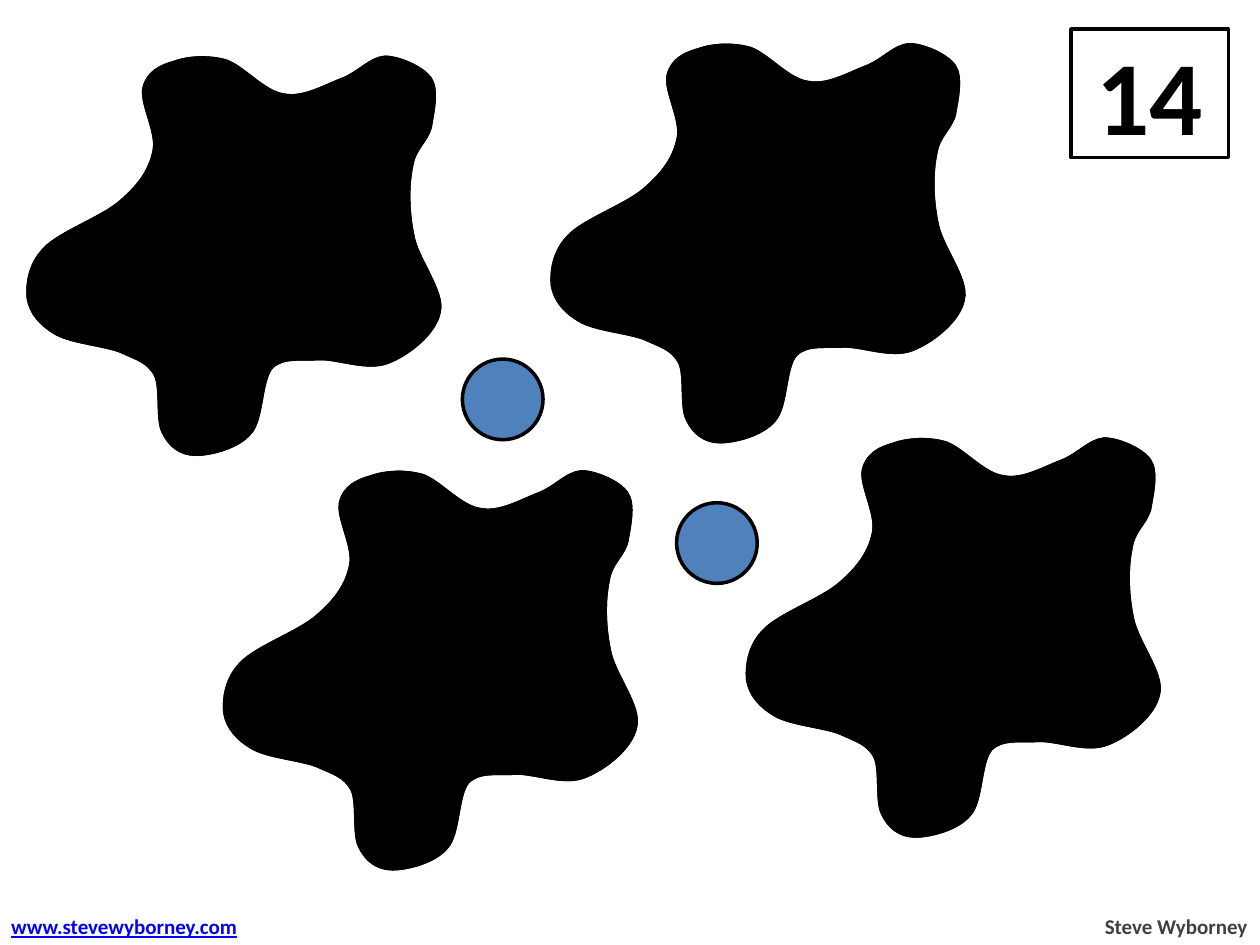
from lxml.etree import SubElement
from pptx import Presentation
from pptx.dml.color import RGBColor
from pptx.enum.shapes import MSO_SHAPE
from pptx.enum.text import MSO_ANCHOR, MSO_AUTO_SIZE, PP_ALIGN
from pptx.oxml.ns import qn
from pptx.util import Inches, Pt

BLACK, WHITE, BLUE = "000000", "FFFFFF", "4F81BD"
DOT_SIZE = 0.64
DOTS = [(2.14, 5.15), (4.47, 1.82), (4.1, 4.18), (0.58, 1.97), (5.37, 3.99),
        (1.33, 2.89), (2.43, 1.93), (6.83, 2.06), (2.98, 3.95), (3.67, 2.85),
        (8.3, 3.93), (6.51, 4.97), (6.94, 3.67), (5.47, 2.66)]
SPLATS = [(0.28, 0.4), (4.44, 0.3), (5.99, 3.43), (1.84, 3.69)]

# Splat outline before rotation, in hundredths of an inch:
# a start point, then two control points and an end point per curve
SPLAT_START = (96, 22)
SPLAT_CURVES = [
    ((103, 10), (112, 2), (124, 0)),
    ((135, -1), (151, 1), (163, 13)),
    ((176, 25), (188, 60), (201, 74)),
    ((214, 89), (226, 97), (241, 100)),
    ((256, 103), (279, 89), (291, 92)),
    ((303, 95), (308, 105), (311, 116)),
    ((315, 127), (316, 143), (312, 157)),
    ((307, 171), (287, 187), (285, 203)),
    ((282, 218), (292, 235), (297, 248)),
    ((302, 262), (314, 271), (315, 283)),
    ((315, 294), (307, 313), (298, 319)),
    ((289, 325), (272, 321), (260, 319)),
    ((248, 316), (243, 306), (228, 304)),
    ((214, 301), (193, 301), (174, 305)),
    ((155, 308), (129, 330), (113, 326)),
    ((96, 323), (79, 301), (73, 285)),
    ((67, 269), (76, 247), (76, 232)),
    ((75, 216), (78, 202), (69, 193)),
    ((59, 184), (28, 186), (17, 176)),
    ((5, 166), (0, 144), (0, 133)),
    ((0, 121), (7, 112), (18, 107)),
    ((28, 102), (53, 106), (63, 101)),
    ((74, 95), (76, 86), (82, 73)),
    ((87, 60), (89, 34), SPLAT_START),
]


def rgb(color):
    return RGBColor.from_string(color)


def style(sp, fill, opacity=100):
    """Flat fill with the black 2 pt outline shared by all shapes."""
    sp.shadow.inherit = False
    sp.fill.solid()
    sp.fill.fore_color.rgb = rgb(fill)
    sp.line.color.rgb = rgb(BLACK)
    sp.line.width = Pt(2)
    if opacity < 100:
        color = sp._element.spPr.find(qn("a:solidFill"))[0]
        SubElement(color, qn("a:alpha"), val=str(opacity * 1000))


def write(tf, text, size, color=BLACK, align=PP_ALIGN.LEFT, underline=None):
    p = tf.paragraphs[0]
    p.alignment = align
    r = p.add_run()
    r.text = text
    r.font.name = "Calibri"
    r.font.size = Pt(size)
    r.font.bold = True
    r.font.underline = underline
    r.font.color.rgb = rgb(color)


def add_dots(s):
    group = s.shapes.add_group_shape()
    for x, y in DOTS:
        sp = group.shapes.add_shape(MSO_SHAPE.OVAL, Inches(x), Inches(y),
                                    Inches(DOT_SIZE), Inches(DOT_SIZE))
        style(sp, BLUE)


def add_number(s, text):
    sp = s.shapes.add_shape(MSO_SHAPE.RECTANGLE, Inches(8.5), Inches(0.23),
                            Inches(1.25), Inches(1.02))
    style(sp, WHITE)
    sp.text_frame.vertical_anchor = MSO_ANCHOR.MIDDLE
    write(sp.text_frame, text, 60, align=PP_ALIGN.CENTER)


def add_footer(s, text, left, width, **fmt):
    box = s.shapes.add_textbox(Inches(left), Inches(7.2), Inches(width), Inches(0.3))
    tf = box.text_frame
    tf.word_wrap = False
    tf.auto_size = MSO_AUTO_SIZE.SHAPE_TO_FIT_TEXT
    write(tf, text, 12, **fmt)


def add_splat(s, left, top, opacity):
    builder = s.shapes.build_freeform(*SPLAT_START, scale=Inches(0.01))
    builder.add_line_segments([curve[-1] for curve in SPLAT_CURVES], close=True)
    sp = builder.convert_to_shape(Inches(left), Inches(top))
    # Turn each straight segment into its curve
    segments = list(sp._element.iter(qn("a:lnTo")))
    for segment, curve in zip(segments, SPLAT_CURVES):
        outline = segment.getparent()
        bezier = SubElement(outline, qn("a:cubicBezTo"))
        for x, y in curve:
            SubElement(bezier, qn("a:pt"), x=str(x), y=str(y))
        outline.replace(segment, bezier)
    sp.rotation = 270
    style(sp, BLACK, opacity)


def main():
    prs = Presentation()
    prs.slide_width, prs.slide_height = Inches(10), Inches(7.5)
    s = prs.slides.add_slide(prs.slide_layouts[6])

    add_dots(s)
    add_number(s, "14")
    add_footer(s, "Steve Wyborney", 8.66, 1.34, color="404040", align=PP_ALIGN.RIGHT)
    add_footer(s, "www.stevewyborney.com", -0.01, 2.05, color="0000FF", underline=True)

    # Each splat is a solid cover with a translucent one on top
    for left, top in SPLATS:
        for opacity in (100, 40):
            add_splat(s, left, top, opacity)

    prs.save("out.pptx")


if __name__ == "__main__":
    main()
